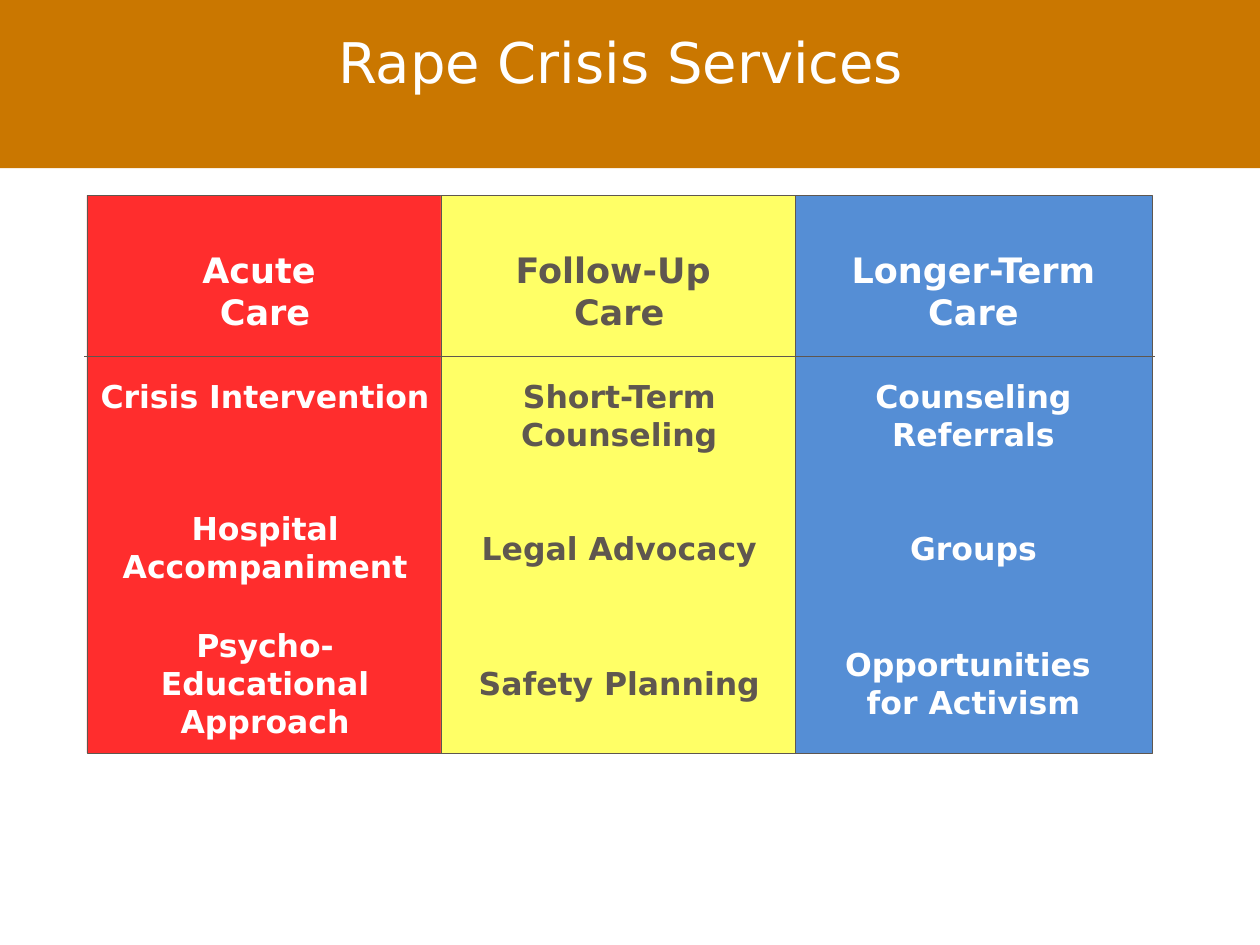
from lxml import etree
from pptx import Presentation
from pptx.dml.color import RGBColor
from pptx.enum.shapes import MSO_CONNECTOR, MSO_SHAPE
from pptx.enum.text import MSO_ANCHOR, PP_ALIGN
from pptx.oxml.ns import qn
from pptx.util import Cm, Pt

RECTANGLE = MSO_SHAPE.RECTANGLE
STRAIGHT = MSO_CONNECTOR.STRAIGHT
CENTER = PP_ALIGN.CENTER
TOP = MSO_ANCHOR.TOP
MIDDLE = MSO_ANCHOR.MIDDLE

FONT = "DejaVu Sans"
WHITE = RGBColor(0xFF, 0xFF, 0xFF)
GRAY = RGBColor(0x5F, 0x57, 0x4F)
ORANGE = RGBColor(0xCA, 0x77, 0x00)
RED = RGBColor(0xFF, 0x2D, 0x2D)
YELLOW = RGBColor(0xFF, 0xFF, 0x66)
BLUE = RGBColor(0x55, 0x8E, 0xD5)

COLUMN_LEFT, COLUMN_TOP = 1.75, 3.94
COLUMN_WIDTH, COLUMN_HEIGHT = 7.19, 11.24
COLUMN_PITCH = 7.14
HEADING_TOP, HEADING_HEIGHT = 4.88, 1.96
ROW_CENTERS = (8.37, 11.04, 13.78)
LINE_HEIGHT, BOX_PADDING = 0.77, 0.25

# fill, text colour, heading paragraphs, services as (paragraphs, line count)
COLUMNS = (
    (RED, WHITE, ["Acute ", "Care"],
     ((["Crisis Intervention"], 2),
      (["Hospital Accompaniment"], 2),
      (["Psycho-Educational Approach"], 3))),
    (YELLOW, GRAY, ["Follow-Up ", "Care"],
     ((["Short-Term Counseling"], 2),
      (["Legal Advocacy"], 1),
      (["Safety Planning"], 1))),
    (BLUE, WHITE, ["Longer-Term Care"],
     ((["Counseling Referrals"], 2),
      (["Groups"], 1),
      (["Opportunities ", "for Activism"], 2))),
)


def add_block(page, left, top, width, height, fill, outline=None):
    block = page.shapes.add_shape(
        RECTANGLE, Cm(left), Cm(top), Cm(width), Cm(height))
    block.shadow.inherit = False
    block.fill.solid()
    block.fill.fore_color.rgb = fill
    if outline is None:
        block.line.fill.background()
    else:
        block.line.color.rgb = outline
        block.line.width = Pt(0.25)


def add_text(page, left, top, width, height, texts, size, color,
             bold=True, anchor=TOP, spacing=None):
    box = page.shapes.add_textbox(Cm(left), Cm(top), Cm(width), Cm(height))
    frame = box.text_frame
    frame.word_wrap = True
    frame.vertical_anchor = anchor
    for index, text in enumerate(texts):
        para = frame.add_paragraph() if index else frame.paragraphs[0]
        para.text = text
        para.alignment = CENTER
        para.line_spacing = spacing
        para.font.name = FONT
        para.font.size = Pt(size)
        para.font.bold = bold
        para.font.color.rgb = color


def add_divider(page, left, right, y):
    divider = page.shapes.add_connector(
        STRAIGHT, Cm(left), Cm(y), Cm(right), Cm(y))
    divider.line.color.rgb = GRAY
    divider.line.width = Pt(0.75)
    etree.SubElement(divider._element.spPr, qn("a:effectLst"))


def add_column_text(page, left, color, heading, services):
    add_text(page, left, HEADING_TOP, COLUMN_WIDTH, HEADING_HEIGHT,
             heading, 20, color)
    for center, (texts, lines) in zip(ROW_CENTERS, services):
        height = BOX_PADDING + LINE_HEIGHT * lines
        add_text(page, left, center - height / 2, COLUMN_WIDTH, height,
                 texts, 18, color)


def main():
    deck = Presentation()
    deck.slide_width, deck.slide_height = Cm(25.4), Cm(19.05)
    page = deck.slides.add_slide(deck.slide_layouts[6])

    add_block(page, 0, 0, 25.4, 3.39, ORANGE)
    add_text(page, 1.27, 0.23, 22.86, 2.46, ["Rape Crisis Services "], 32,
             WHITE, bold=False, anchor=MIDDLE, spacing=Pt(25))

    lefts = [COLUMN_LEFT + COLUMN_PITCH * i for i in range(len(COLUMNS))]
    for left, (fill, *_) in zip(lefts, COLUMNS):
        add_block(page, left, COLUMN_TOP, COLUMN_WIDTH, COLUMN_HEIGHT,
                  fill, GRAY)
    add_divider(page, 1.7, 23.29, 7.19)
    for left, (_, color, heading, services) in zip(lefts, COLUMNS):
        add_column_text(page, left, color, heading, services)

    deck.save("out.pptx")


if __name__ == "__main__":
    main()
